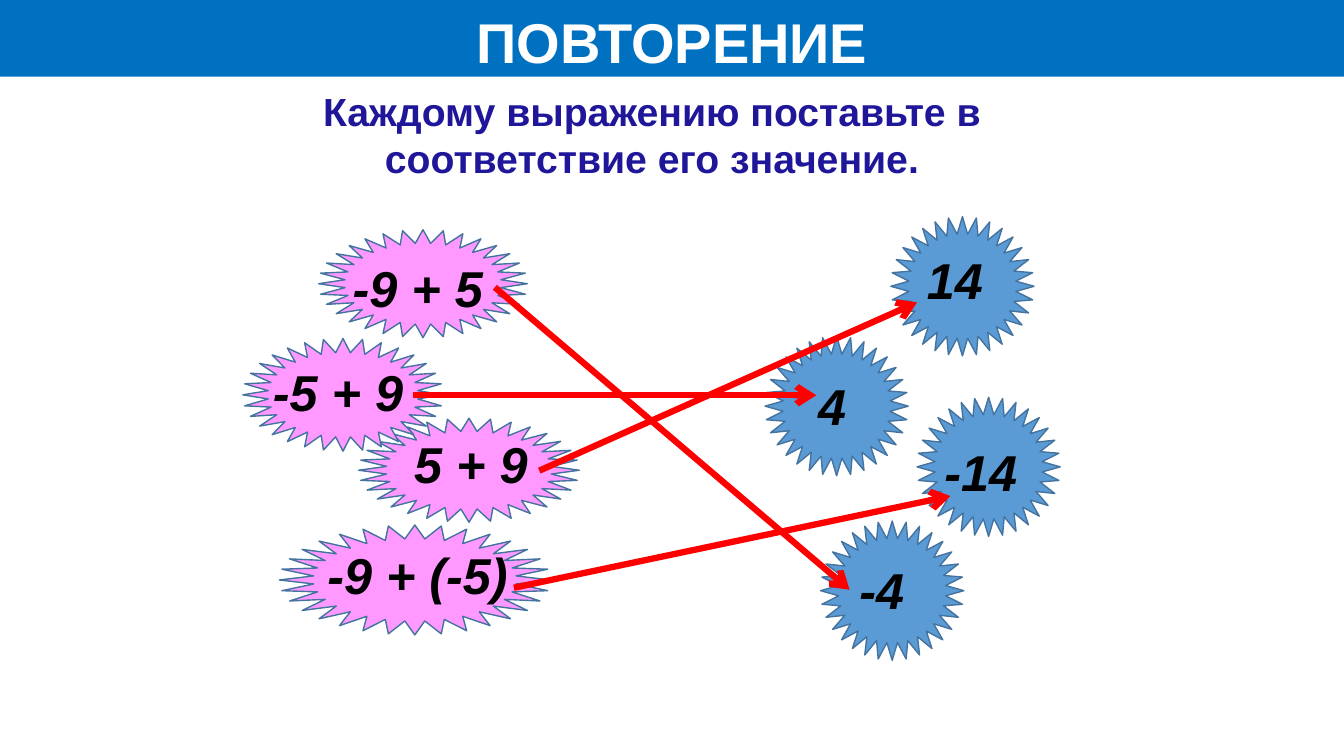
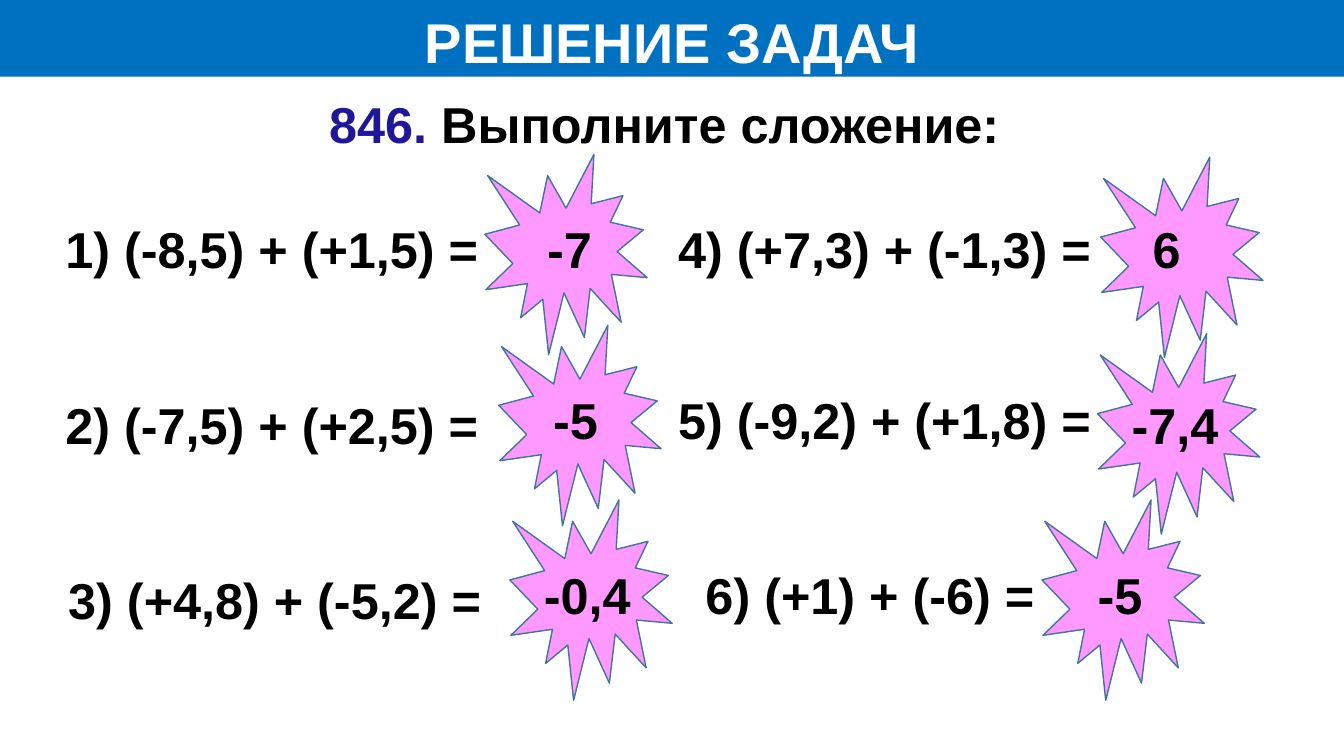
"""Build two maths slides: matching expressions to values, and addition exercises."""
from dataclasses import dataclass

from lxml.etree import SubElement
from pptx import Presentation
from pptx.dml.color import RGBColor
from pptx.enum.shapes import MSO_CONNECTOR as Connector, MSO_SHAPE as Preset
from pptx.enum.text import MSO_ANCHOR as Anchor, MSO_AUTO_SIZE as AutoSize, PP_ALIGN as Align
from pptx.oxml.ns import qn
from pptx.util import Cm, Pt


@dataclass(frozen=True)
class Theme:
    font: str = "Arial"
    band: str = "0070C0"
    white: str = "FFFFFF"
    black: str = "000000"
    navy: str = "1F169A"
    pink: str = "FF99FF"
    blue: str = "5B9BD5"
    outline: str = "43739E"
    red: str = "FF0000"
    title_size: int = 40
    instruction_size: int = 28
    text_size: int = 36
    outline_width: float = 1
    arrow_width: float = 4.5


THEME = Theme()
SLIDE_SIZE = (33.87, 19.05)
BAND_HEIGHT = 1.93
LABEL_HEIGHT = 1.8
VALUE_STAR = (3.61, 3.51)
SEAL = (4.09, 5.05)
EXPRESSION_WIDTH, VALUE_WIDTH, PROBLEM_WIDTH = 5.3, 3.2, 11.4

REVIEW = {
    "title": "ПОВТОРЕНИЕ",
    "box": (6.23, 2.08, 20.4, 2.64),
    "size": THEME.instruction_size,
    "runs": [("Каждому выражению поставьте в соответствие его значение.", THEME.navy)],
}
EXERCISES = {
    "title": "РЕШЕНИЕ ЗАДАЧ",
    "box": (6.54, 2.21, 20.4, 1.8),
    "size": THEME.text_size,
    "runs": [("846. ", THEME.navy), ("Выполните сложение:", THEME.black)],
}

# text, star box, label corner
EXPRESSIONS = [
    ("-9 + (-5)", (7.04, 13.23, 6.83, 2.77), (8, 13.59)),
    ("5 + 9", (9.04, 10.54, 5.56, 2.62), (10.19, 10.8)),
    ("-5 + 9", (6.12, 8.53, 5.05, 2.84), (6.63, 8.97)),
    ("-9 + 5", (8.03, 5.79, 5.26, 2.72), (8.64, 6.35)),
]
VALUES = [
    ("-4", (20.68, 13.13), (21.41, 13.97)),
    ("4", (19.28, 8.48), (20.37, 9.32)),
    ("-14", (23.11, 10.01), (23.55, 11)),
    ("14", (22.45, 5.46), (23.11, 6.15)),
]
MATCHES = [
    ((12.47, 7.24), (21.41, 14.86)),
    ((10.41, 9.96), (20.57, 9.96)),
    ((13.59, 11.86), (23.11, 7.62)),
    ((12.95, 14.81), (23.95, 12.5)),
]
PROBLEMS = [
    ("1) (-8,5) + (+1,5) =", (1.4, 5.38), "-7", (12.22, 3.89), (13.54, 5.38)),
    ("2) (-7,5) + (+2,5) =", (1.4, 9.8), "-5", (12.57, 8.2), (13.69, 9.68)),
    ("3) (+4,8) + (-5,2) =", (1.47, 14.22), "-0,4", (12.85, 12.6), (13.46, 14.1)),
    ("4) (+7,3) + (-1,3) =", (16.84, 5.38), "6", (27.74, 3.96), (28.8, 5.38)),
    ("5) (-9,2) + (+1,8) =", (16.84, 9.68), "-7,4", (27.66, 8.41), (28.27, 9.8)),
    ("6) (+1) + (-6) =", (17.53, 14.1), "-5", (26.26, 12.6), (27.41, 14.1)),
]


def color(value):
    return RGBColor.from_string(value)


def lengths(*values):
    return [Cm(value) for value in values]


def place(shape, box):
    shape.left, shape.top, shape.width, shape.height = lengths(*box)


def write(shape, runs, size, align=Align.LEFT, italic=False):
    frame = shape.text_frame
    frame.word_wrap = True
    frame.auto_size = AutoSize.NONE
    frame.vertical_anchor = Anchor.TOP
    paragraph = frame.paragraphs[0]
    paragraph.alignment = align
    paragraph.space_before = Pt(0)
    for text, text_color in runs:
        run = paragraph.add_run()
        run.text = text
        font = run.font
        font.name, font.size = THEME.font, Pt(size)
        font.bold, font.italic = True, italic
        font.color.rgb = color(text_color)
    return paragraph


def add_slide(presentation, content):
    slide = presentation.slides.add_slide(presentation.slide_layouts[1])
    title, body = slide.placeholders
    place(title, (0, 0, SLIDE_SIZE[0], BAND_HEIGHT))
    title.fill.solid()
    title.fill.fore_color.rgb = color(THEME.band)
    write(title, [(content["title"], THEME.white)], THEME.title_size, Align.CENTER)
    title.text_frame.margin_top = Cm(0.2)
    title.text_frame.margin_bottom = Cm(0)
    place(body, content["box"])
    paragraph = write(body, content["runs"], content["size"], Align.CENTER)
    properties = paragraph._p.get_or_add_pPr()
    properties.set("marL", "0")
    properties.set("indent", "0")
    SubElement(properties, qn("a:buNone"))
    return slide


def add_burst(slide, preset, box, fill):
    burst = slide.shapes.add_shape(preset, *lengths(*box))
    burst.shadow.inherit = False
    burst.fill.solid()
    burst.fill.fore_color.rgb = color(fill)
    burst.line.color.rgb = color(THEME.outline)
    burst.line.width = Pt(THEME.outline_width)


def add_label(slide, text, corner, width, italic=False):
    label = slide.shapes.add_textbox(*lengths(*corner, width, LABEL_HEIGHT))
    write(label, [(text, THEME.black)], THEME.text_size, italic=italic)


def add_arrow(slide, start, end):
    arrow = slide.shapes.add_connector(Connector.STRAIGHT, *lengths(*start, *end))
    arrow.line.color.rgb = color(THEME.red)
    arrow.line.width = Pt(THEME.arrow_width)
    properties = arrow._element.spPr
    SubElement(properties.find(qn("a:ln")), qn("a:tailEnd"), type="arrow")
    SubElement(properties, qn("a:effectLst"))


def build_review(presentation):
    slide = add_slide(presentation, REVIEW)
    for _, box, _ in EXPRESSIONS:
        add_burst(slide, Preset.STAR_32_POINT, box, THEME.pink)
    for _, corner, _ in VALUES:
        add_burst(slide, Preset.STAR_32_POINT, corner + VALUE_STAR, THEME.blue)
    for labels, width in ((EXPRESSIONS, EXPRESSION_WIDTH), (VALUES, VALUE_WIDTH)):
        for text, _, corner in labels:
            add_label(slide, text, corner, width, italic=True)
    for start, end in MATCHES:
        add_arrow(slide, start, end)


def build_exercises(presentation):
    slide = add_slide(presentation, EXERCISES)
    for problem, problem_corner, answer, seal_corner, answer_corner in PROBLEMS:
        add_label(slide, problem, problem_corner, PROBLEM_WIDTH)
        add_burst(slide, Preset.EXPLOSION1, seal_corner + SEAL, THEME.pink)
        add_label(slide, answer, answer_corner, VALUE_WIDTH)


def main():
    presentation = Presentation()
    presentation.slide_width, presentation.slide_height = lengths(*SLIDE_SIZE)
    build_review(presentation)
    build_exercises(presentation)
    presentation.save("out.pptx")


if __name__ == "__main__":
    main()
